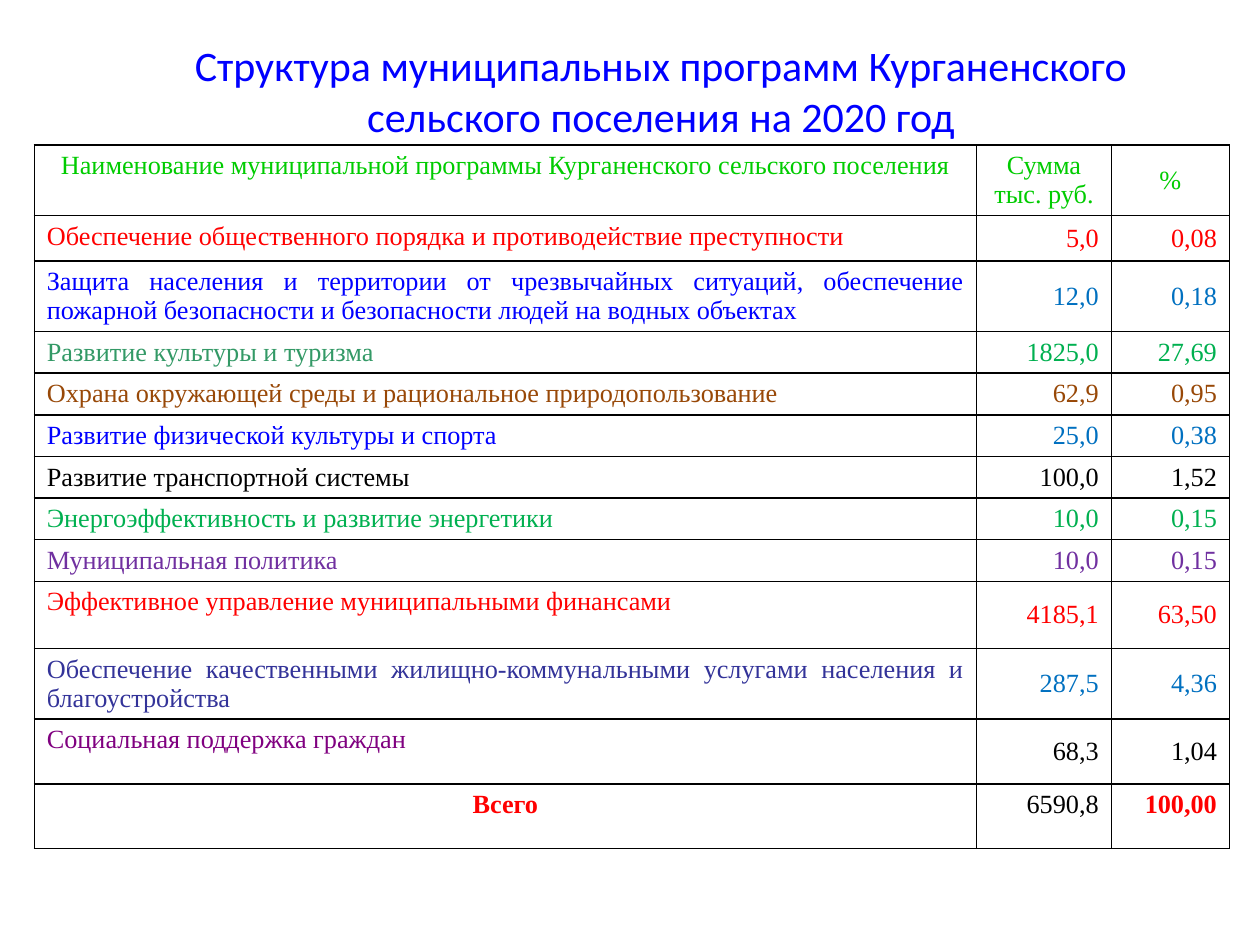
import pptx
import pptx.util
import pptx.dml.color
import pptx.enum.text
import lxml.etree

Pt = pptx.util.Pt
RGBColor = pptx.dml.color.RGBColor
ALIGN = pptx.enum.text.PP_ALIGN
ANCHOR = pptx.enum.text.MSO_ANCHOR

# Colours
BLACK = RGBColor(0x00, 0x00, 0x00)
RED = RGBColor(0xFF, 0x00, 0x00)
BLUE = RGBColor(0x00, 0x00, 0xFF)
LIGHT_BLUE = RGBColor(0x00, 0x70, 0xC0)
LIME = RGBColor(0x00, 0xCC, 0x00)
GREEN = RGBColor(0x00, 0xB0, 0x50)
SEA_GREEN = RGBColor(0x33, 0x99, 0x66)
BROWN = RGBColor(0x98, 0x48, 0x07)
VIOLET = RGBColor(0x70, 0x30, 0xA0)
INDIGO = RGBColor(0x33, 0x33, 0x99)
PURPLE = RGBColor(0x80, 0x00, 0x80)

# Content
TITLE = "Структура муниципальных программ Курганенского сельского поселения на 2020 год"
HEADER = ("Наименование муниципальной программы Курганенского сельского поселения",
          "Сумма тыс. руб.", "%")
# name, sum, share, name colour, number colour, row height
PROGRAMS = [
    ("Обеспечение общественного порядка и противодействие преступности",
     "5,0", "0,08", RED, RED, 26),
    ("Защита населения и территории от чрезвычайных ситуаций, обеспечение "
     "пожарной безопасности и безопасности людей на водных объектах",
     "12,0", "0,18", BLUE, LIGHT_BLUE, 40.3),
    ("Развитие культуры и туризма", "1825,0", "27,69", SEA_GREEN, GREEN, 23.8),
    ("Охрана окружающей среды и рациональное природопользование",
     "62,9", "0,95", BROWN, BROWN, 23.8),
    ("Развитие физической культуры и спорта", "25,0", "0,38", BLUE, LIGHT_BLUE, 23.8),
    ("Развитие транспортной системы", "100,0", "1,52", BLACK, BLACK, 23.8),
    ("Энергоэффективность и развитие энергетики", "10,0", "0,15", GREEN, GREEN, 23.8),
    ("Муниципальная политика", "10,0", "0,15", VIOLET, VIOLET, 23.8),
    ("Эффективное управление муниципальными финансами",
     "4185,1", "63,50", RED, RED, 38.5),
    ("Обеспечение качественными жилищно-коммунальными услугами населения и благоустройства",
     "287,5", "4,36", INDIGO, LIGHT_BLUE, 40.3),
    ("Социальная поддержка граждан", "68,3", "1,04", PURPLE, BLACK, 37),
]
TOTAL = ("Всего", "6590,8", "100,00")

# Layout
COLUMN_WIDTHS = (538.5, 77, 67.5)
HEADER_HEIGHT, TOTAL_HEIGHT = 40.3, 37
TABLE_LEFT, TABLE_TOP = 19.6, 82.8


def add_text(frame, text, align, font_name, size, color, bold=False):
    paragraph = frame.paragraphs[0]
    paragraph.alignment = align
    run = paragraph.add_run()
    run.text = text
    run.font.name = font_name
    run.font.size = Pt(size)
    run.font.bold = bold
    run.font.color.rgb = color


def add_borders(cell):
    properties = cell._tc.get_or_add_tcPr()
    namespace = "{http://schemas.openxmlformats.org/drawingml/2006/main}"
    for side in ("lnL", "lnR", "lnT", "lnB"):
        line = lxml.etree.SubElement(properties, namespace + side, w=str(Pt(1)))
        fill = lxml.etree.SubElement(line, namespace + "solidFill")
        lxml.etree.SubElement(fill, namespace + "srgbClr", val=str(BLACK))


def fill_cell(cell, text, align, color, anchor=ANCHOR.TOP, bold=False):
    add_borders(cell)
    cell.fill.background()
    cell.vertical_anchor = anchor
    add_text(cell.text_frame, text, align, "Times New Roman", 15, color, bold)


presentation = pptx.Presentation()
presentation.slide_width, presentation.slide_height = Pt(720), Pt(540)
slide = presentation.slides.add_slide(presentation.slide_layouts[5])

# Title
title = slide.shapes.title
title.left, title.top, title.width, title.height = Pt(72), Pt(20.2), Pt(611.3), Pt(62.6)
title.text_frame.word_wrap = True
title.text_frame.vertical_anchor = ANCHOR.MIDDLE
add_text(title.text_frame, TITLE, ALIGN.CENTER, "Calibri", 24, BLUE)

# Table grid
heights = [HEADER_HEIGHT, *(program[-1] for program in PROGRAMS), TOTAL_HEIGHT]
table = slide.shapes.add_table(
    len(heights), len(COLUMN_WIDTHS), Pt(TABLE_LEFT), Pt(TABLE_TOP),
    Pt(sum(COLUMN_WIDTHS)), Pt(sum(heights))).table
table.first_row = table.horz_banding = False
for column, width in zip(table.columns, COLUMN_WIDTHS):
    column.width = Pt(width)
for row, height in zip(table.rows, heights):
    row.height = Pt(height)

# Header row
for index, text in enumerate(HEADER):
    anchor = ANCHOR.MIDDLE if index else ANCHOR.TOP
    fill_cell(table.cell(0, index), text, ALIGN.CENTER, LIME, anchor)

# Program rows
for row, (name, amount, share, name_color, number_color, _) in enumerate(PROGRAMS, 1):
    fill_cell(table.cell(row, 0), name, ALIGN.JUSTIFY, name_color)
    for index, text in enumerate((amount, share), 1):
        fill_cell(table.cell(row, index), text, ALIGN.RIGHT, number_color, ANCHOR.MIDDLE)

# Total row
for index, text in enumerate(TOTAL):
    is_amount = index == 1
    fill_cell(table.cell(len(heights) - 1, index), text,
              ALIGN.RIGHT if index else ALIGN.CENTER,
              BLACK if is_amount else RED, bold=not is_amount)

presentation.save("out.pptx")
